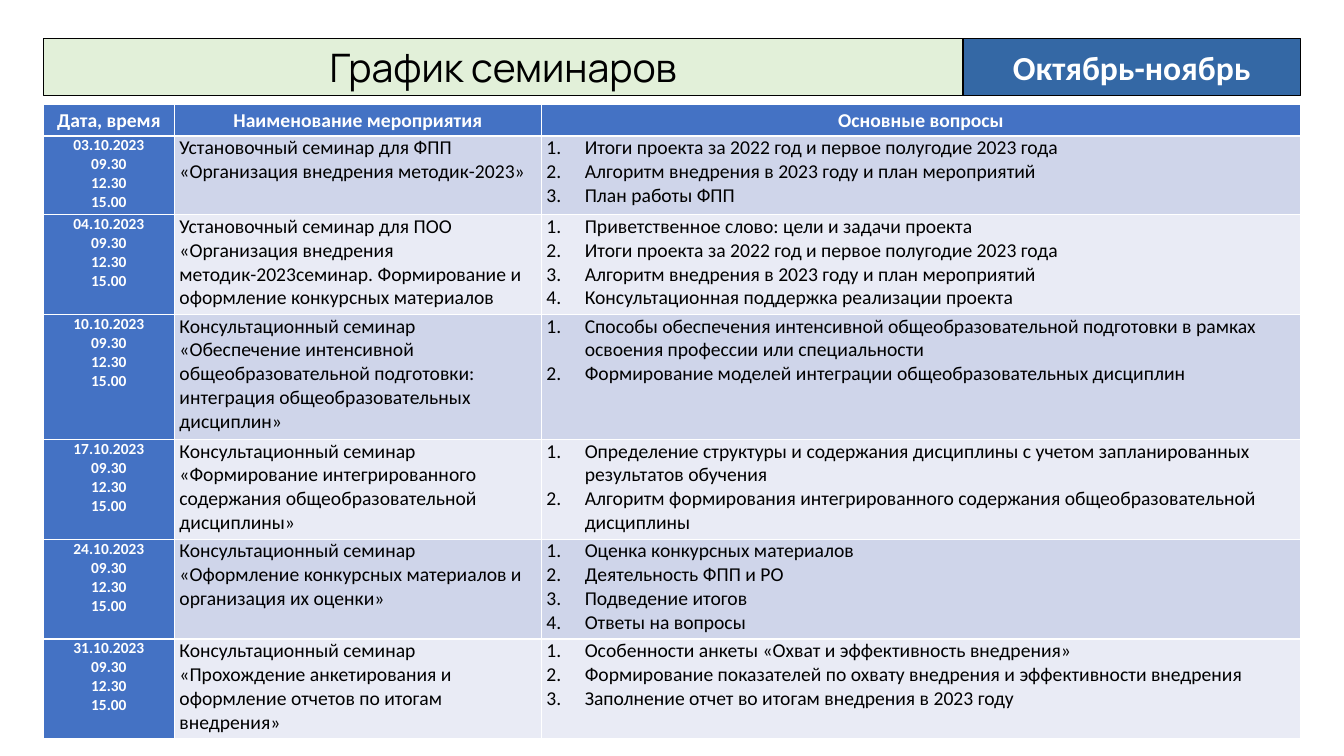
"""Build the seminar schedule slide for October and November."""
from dataclasses import dataclass
from typing import Any

from lxml import etree
from pptx import Presentation
from pptx.dml.color import RGBColor
from pptx.enum.shapes import MSO_SHAPE
from pptx.enum.text import MSO_ANCHOR, MSO_AUTO_SIZE, PP_ALIGN
from pptx.oxml.ns import qn
from pptx.util import Inches, Pt

RECTANGLE = MSO_SHAPE.RECTANGLE
TOP, MIDDLE = MSO_ANCHOR.TOP, MSO_ANCHOR.MIDDLE
GROW, FIXED = MSO_AUTO_SIZE.SHAPE_TO_FIT_TEXT, MSO_AUTO_SIZE.NONE
LEFT, CENTER = PP_ALIGN.LEFT, PP_ALIGN.CENTER


@dataclass(frozen=True)
class Theme:
    black: str = "000000"
    white: str = "FFFFFF"
    title_fill: str = "E2F0D9"
    period_fill: str = "3468A5"
    accent: str = "4472C4"
    bands: tuple[str, str] = ("CFD5EA", "E9EBF5")
    title_font: str = "Manrope"
    body_font: str = "Calibri"
    title_size: float = 28
    period_size: float = 24
    body_size: float = 14
    date_size: float = 11


@dataclass(frozen=True)
class TextStyle:
    size: float
    color: str
    bold: bool = False
    align: Any = CENTER
    font: str = Theme.body_font
    numbered: bool = False


@dataclass(frozen=True)
class Banner:
    text: str
    place: tuple[float, float, float, float]
    fill: str
    line_width: float
    style: TextStyle
    frame: dict[str, Any]
    rotation: float = 0
    direction: str = "horz"


@dataclass(frozen=True)
class Seminar:
    date: str
    height: float
    name: str
    topics: tuple[str, ...]


THEME = Theme()
HEADER = TextStyle(THEME.body_size, THEME.white, bold=True)
DATE = TextStyle(THEME.date_size, THEME.white, bold=True)
NAME = TextStyle(THEME.body_size, THEME.black, align=LEFT)
TOPIC = TextStyle(THEME.body_size, THEME.black, align=LEFT, numbered=True)

BANNERS = (
    Banner("График семинаров", (0.43, 0.38, 9.12, 0.57), THEME.title_fill, 0.75,
           TextStyle(THEME.title_size, THEME.black, font=THEME.title_font),
           {"vertical_anchor": TOP, "word_wrap": True, "auto_size": GROW}),
    Banner("Октябрь-ноябрь", (10.94, -1.01, 0.57, 3.35), THEME.period_fill, 1,
           TextStyle(THEME.period_size, THEME.white, bold=True),
           {"vertical_anchor": MIDDLE, "word_wrap": True, "auto_size": FIXED},
           rotation=90, direction="vert270"),
)

TABLE_LEFT, TABLE_TOP = 0.43, 1.04
COLUMN_WIDTHS = (1.3, 3.64, 7.53)
HEADER_HEIGHT = 0.31
HEADINGS = ("Дата, время", "Наименование мероприятия", "Основные вопросы")
TIMES = ("09.30", "12.30", "15.00")
CELL_FORMAT = {"margin_left": Inches(0.05), "margin_right": Inches(0.05),
               "margin_top": 0, "margin_bottom": 0}
NUMBER_INDENT = Inches(0.38)

SEMINARS = (
    Seminar("03.10.2023", 0.78,
            "Установочный семинар для ФПП «Организация внедрения методик-2023»",
            ("Итоги проекта за 2022 год и первое полугодие 2023 года",
             "Алгоритм внедрения в 2023 году и план мероприятий",
             "План работы ФПП")),
    Seminar("04.10.2023", 0.99,
            "Установочный семинар для ПОО «Организация внедрения "
            "методик-2023семинар. Формирование и оформление конкурсных материалов",
            ("Приветственное слово: цели и задачи проекта",
             "Итоги проекта за 2022 год и первое полугодие 2023 года",
             "Алгоритм внедрения в 2023 году и план мероприятий",
             "Консультационная поддержка реализации проекта")),
    Seminar("10.10.2023", 1.24,
            "Консультационный семинар «Обеспечение интенсивной общеобразовательной "
            "подготовки: интеграция общеобразовательных дисциплин»",
            ("Способы обеспечения интенсивной общеобразовательной подготовки "
             "в рамках освоения профессии или специальности",
             "Формирование моделей интеграции общеобразовательных дисциплин")),
    Seminar("17.10.2023", 0.99,
            "Консультационный семинар «Формирование интегрированного содержания "
            "общеобразовательной дисциплины»",
            ("Определение структуры и содержания дисциплины с учетом "
             "запланированных результатов обучения",
             "Алгоритм формирования интегрированного содержания "
             "общеобразовательной дисциплины")),
    Seminar("24.10.2023", 0.99,
            "Консультационный семинар «Оформление конкурсных материалов "
            "и организация их оценки»",
            ("Оценка конкурсных материалов", "Деятельность ФПП и РО",
             "Подведение итогов", "Ответы на вопросы")),
    Seminar("31.10.2023", 0.99,
            "Консультационный семинар «Прохождение анкетирования и оформление "
            "отчетов по итогам внедрения»",
            ("Особенности анкеты «Охват и эффективность внедрения»",
             "Формирование показателей по охвату внедрения и эффективности внедрения",
             "Заполнение отчет во итогам внедрения в 2023 году")),
)


def apply_format(target: Any, values: dict[str, Any]) -> None:
    """Set each named attribute on the target."""
    for name, value in values.items():
        setattr(target, name, value)


def paint(fill: Any, color: str) -> None:
    """Give a fill one solid colour."""
    fill.solid()
    fill.fore_color.rgb = RGBColor.from_string(color)


def number_paragraph(para: Any) -> None:
    """Turn a paragraph into a numbered item with a hanging indent."""
    properties = para._p.get_or_add_pPr()
    properties.set("marL", str(NUMBER_INDENT))
    properties.set("indent", str(-NUMBER_INDENT))
    etree.SubElement(properties, qn("a:buFont"), typeface="+mj-lt")
    etree.SubElement(properties, qn("a:buAutoNum"), type="arabicPeriod")


def write_lines(frame: Any, lines: tuple[str, ...], style: TextStyle) -> None:
    """Write one styled paragraph per line."""
    for index, line in enumerate(lines):
        para = frame.add_paragraph() if index else frame.paragraphs[0]
        para.alignment = style.align
        span = para.add_run()
        span.text = line
        apply_format(span.font, {"name": style.font, "size": Pt(style.size),
                                 "bold": style.bold})
        span.font.color.rgb = RGBColor.from_string(style.color)
        if style.numbered:
            number_paragraph(para)


def draw_banner(page: Any, banner: Banner) -> None:
    """Draw a filled banner with its text."""
    box = page.shapes.add_shape(RECTANGLE, *map(Inches, banner.place))
    box.shadow.inherit = False
    box.rotation = banner.rotation
    paint(box.fill, banner.fill)
    paint(box.line.fill, THEME.black)
    box.line.width = Pt(banner.line_width)
    apply_format(box.text_frame, banner.frame)
    box.element.txBody.find(qn("a:bodyPr")).set("vert", banner.direction)
    write_lines(box.text_frame, (banner.text,), banner.style)


def fill_cell(cell: Any, lines: tuple[str, ...], style: TextStyle,
              color: str, anchor: Any = TOP) -> None:
    """Format one table cell and write its lines."""
    apply_format(cell, CELL_FORMAT | {"vertical_anchor": anchor})
    paint(cell.fill, color)
    write_lines(cell.text_frame, lines, style)


def draw_schedule(page: Any) -> None:
    """Draw the table of seminars."""
    heights = (HEADER_HEIGHT, *(seminar.height for seminar in SEMINARS))
    table = page.shapes.add_table(
        len(heights), len(COLUMN_WIDTHS), Inches(TABLE_LEFT), Inches(TABLE_TOP),
        Inches(sum(COLUMN_WIDTHS)), Inches(sum(heights))).table
    table.first_col = True
    for column, width in zip(table.columns, COLUMN_WIDTHS):
        column.width = Inches(width)
    for row, height in zip(table.rows, heights):
        row.height = Inches(height)
    for column, heading in enumerate(HEADINGS):
        fill_cell(table.cell(0, column), (heading,), HEADER, THEME.accent, MIDDLE)
    for index, seminar in enumerate(SEMINARS):
        band = THEME.bands[index % len(THEME.bands)]
        contents = (((seminar.date, *TIMES), DATE, THEME.accent),
                    ((seminar.name,), NAME, band),
                    (seminar.topics, TOPIC, band))
        for column, content in enumerate(contents):
            fill_cell(table.cell(index + 1, column), *content)


def main() -> None:
    """Build and save the deck."""
    deck = Presentation()
    apply_format(deck, {"slide_width": Inches(13.33), "slide_height": Inches(7.5)})
    page = deck.slides.add_slide(deck.slide_layouts[6])
    for banner in BANNERS:
        draw_banner(page, banner)
    draw_schedule(page)
    deck.save("out.pptx")


if __name__ == "__main__":
    main()
